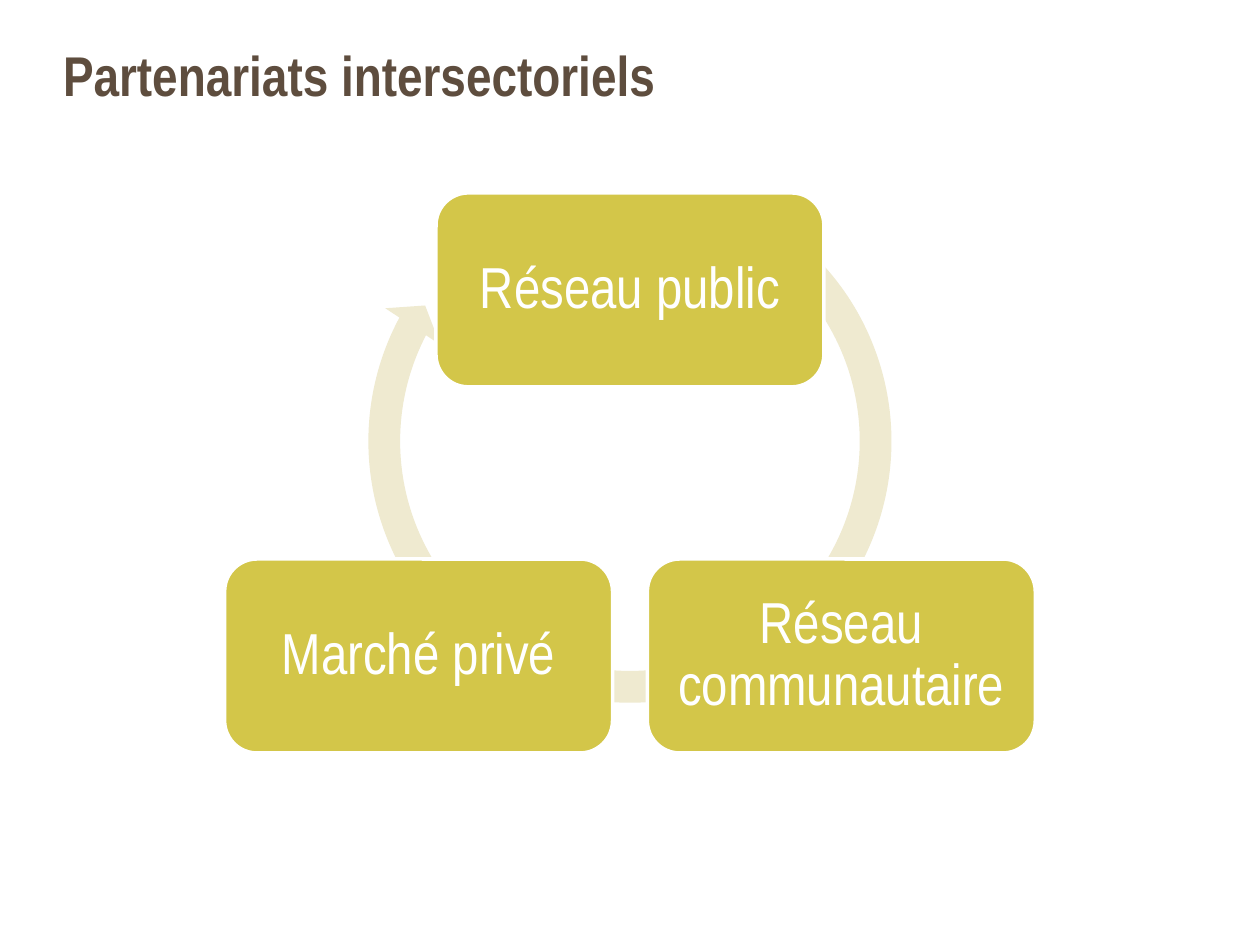
import math
from dataclasses import dataclass

import pptx
import pptx.util
import pptx.dml.color
import pptx.enum.shapes
import pptx.enum.text

Cm, Pt = pptx.util.Cm, pptx.util.Pt
RGB = pptx.dml.color.RGBColor.from_string
SHAPE = pptx.enum.shapes.MSO_SHAPE
ALIGN = pptx.enum.text.PP_ALIGN
ANCHOR = pptx.enum.text.MSO_ANCHOR


@dataclass(frozen=True)
class Theme:
    font: str = "Arial Narrow"
    title: str = "5E4D3E"
    ring: str = "EFEAD0"
    node: str = "D3C649"
    white: str = "FFFFFF"
    title_size: int = 32
    node_size: int = 33


THEME = Theme()


def write(tf, text, size, color, align, bold=False):
    tf.text = text
    tf.word_wrap = True
    p = tf.paragraphs[0]
    p.alignment = align
    p.line_spacing = 0.9
    p.space_before = Pt(0)
    font = p.runs[0].font
    font.name, font.size, font.bold = THEME.font, Pt(size), bold
    font.color.rgb = RGB(color)


def add_title(s, text, left, top, width, height):
    sp = s.shapes.title
    sp.left, sp.top, sp.width, sp.height = left, top, width, height
    tf = sp.text_frame
    write(tf, text, THEME.title_size, THEME.title, ALIGN.LEFT, True)
    tf.auto_size = pptx.enum.text.MSO_AUTO_SIZE.NONE
    tf.vertical_anchor = ANCHOR.TOP
    tf.margin_left = tf.margin_right = 0
    tf.margin_top = tf.margin_bottom = Cm(0.2)


def add_ring(s, left, top, size):
    sp = s.shapes.add_shape(SHAPE.CIRCULAR_ARROW, left, top, size, size)
    sp.shadow.inherit = False
    # Thickness, head angle, end angle, start angle, head width
    for i, value in enumerate((0.057, 3.405, 124.712, 182.346, 0.059)):
        sp.adjustments[i] = value
    sp.fill.solid()
    sp.fill.fore_color.rgb = RGB(THEME.ring)
    sp.line.fill.background()


def add_node(s, text, cx, cy, width, height):
    sp = s.shapes.add_shape(SHAPE.ROUNDED_RECTANGLE, int(cx - width / 2),
                            int(cy - height / 2), width, height)
    sp.shadow.inherit = False
    sp.fill.solid()
    sp.fill.fore_color.rgb = RGB(THEME.node)
    sp.line.color.rgb = RGB(THEME.white)
    sp.line.width = Pt(2)
    tf = sp.text_frame
    write(tf, text, THEME.node_size, THEME.white, ALIGN.CENTER)
    tf.vertical_anchor = ANCHOR.MIDDLE
    tf.margin_left = tf.margin_right = Cm(0.35)
    tf.margin_top = tf.margin_bottom = Cm(0.35)


def add_cycle(s, labels, left, top, width, height):
    """Spread the nodes clockwise from the top, over a circular arrow."""
    node_w, node_h = Cm(7.82), Cm(3.91)
    ring, radius = Cm(11.23), Cm(4.92)
    cx = left + width / 2
    cy = top + node_h / 2 + radius
    add_ring(s, int(cx - ring / 2), top - Cm(0.61), ring)
    for i, label in enumerate(labels):
        angle = 2 * math.pi * i / len(labels)
        add_node(s, label, cx + radius * math.sin(angle),
                 cy - radius * math.cos(angle), node_w, node_h)


def main():
    prs = pptx.Presentation()
    prs.slide_width, prs.slide_height = Cm(25.4), Cm(19.05)
    s = prs.slides.add_slide(prs.slide_layouts[5])
    add_title(s, "Partenariats intersectoriels",
              Cm(1.27), Cm(0.76), Cm(16.13), Cm(1.63))
    add_cycle(s, ("Réseau public", "Réseau communautaire", "Marché privé"),
              Cm(4.53), Cm(3.89), Cm(16.34), Cm(11.29))
    prs.save("out.pptx")


if __name__ == "__main__":
    main()
